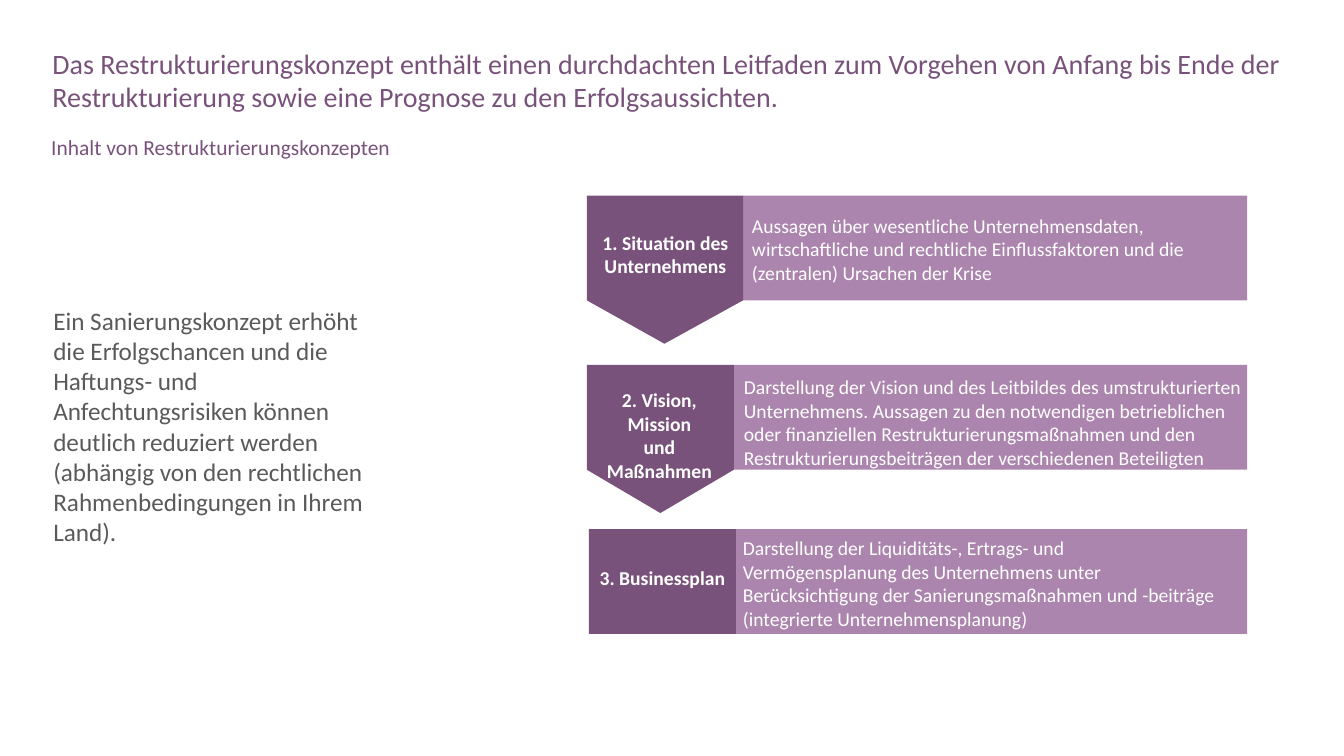
from pptx import Presentation
from pptx.dml.color import RGBColor as Rgb
from pptx.enum.shapes import MSO_SHAPE as Shape
from pptx.enum.text import MSO_ANCHOR as Anchor, MSO_AUTO_SIZE as Fit, PP_ALIGN as Align
from pptx.util import Emu, Pt

PX = 9144
FONT = "Calibri"
HUES = {"dark": "79527B", "light": "AB85AD", "gray": "595A59", "white": "FFFFFF"}
HIGH = 104
STEPS = [
    {"box": (582, 194, 655), "wide": 155, "tip": 43,
     "head": ["1. Situation des Unternehmens"], "tag": (-6, 30, 168, 57),
     "text": "Aussagen über wesentliche Unternehmensdaten, wirtschaftliche und "
             "rechtliche Einflussfaktoren und die (zentralen) Ursachen der Krise",
     "note": (-1, 13, 489, 81)},
    {"box": (582, 362, 655), "wide": 146, "tip": 43,
     "head": ["2. Vision, Mission", "und Maßnahmen"], "tag": (-7, 18, 158, 128),
     "text": "Darstellung der Vision und des Leitbildes des umstrukturierten "
             "Unternehmens. Aussagen zu den notwendigen betrieblichen oder "
             "finanziellen Restrukturierungsmaßnahmen und den "
             "Restrukturierungsbeiträgen der verschiedenen Beteiligten",
     "note": (0, 5, 526, 104)},
    {"box": (584, 525, 653), "wide": 146, "tip": 0,
     "head": ["3. Businessplan"], "tag": (-6, 32, 158, 34),
     "text": "Darstellung der Liquiditäts-, Ertrags- und Vermögensplanung des "
             "Unternehmens unter Berücksichtigung der Sanierungsmaßnahmen und "
             "-beiträge (integrierte Unternehmensplanung)",
     "note": (-3, 2, 493, 104)},
]


def px(*nums):
    """Turn px lengths into EMU."""
    return [Emu(num * PX) for num in nums]


def paint(shape, hue):
    """Give a shape a flat fill without line or shadow."""
    shape.shadow.inherit = False
    shape.fill.solid()
    shape.fill.fore_color.rgb = Rgb.from_string(HUES[hue])
    shape.line.fill.background()


def write(shape, lines, size, hue, bold=False, align=Align.LEFT, anchor=Anchor.TOP):
    """Fill a text shape with one paragraph of broken lines."""
    frame = shape.text_frame
    frame.word_wrap = True
    frame.auto_size = Fit.NONE
    frame.vertical_anchor = anchor
    para = frame.paragraphs[0]
    para.alignment = align
    for num, line in enumerate(lines):
        if num:
            para.add_line_break()
        run = para.add_run()
        run.text = line
        font = run.font
        font.name, font.size, font.bold = FONT, Pt(size), bold
        font.color.rgb = Rgb.from_string(HUES[hue])
    return para


def header(slide, box):
    """Place the title and the subtitle below it."""
    left, top, wide, high = box
    title = slide.shapes.title
    title.left, title.top, title.width, title.height = px(*box)
    write(title, ["Das Restrukturierungskonzept enthält einen durchdachten Leitfaden zum "
                  "Vorgehen von Anfang bis Ende der Restrukturierung sowie eine Prognose "
                  "zu den Erfolgsaussichten."], 20, "dark")
    sub = slide.shapes.add_textbox(*px(left - 1, top + 94, wide + 2, 28))
    para = write(sub, ["Inhalt von Restrukturierungskonzepten"], 15.3, "dark")
    para.line_spacing = 0.7


def aside(slide, box):
    """Place the statement on the left."""
    shape = slide.shapes.add_textbox(*px(*box))
    write(shape, ["Ein Sanierungskonzept erhöht die Erfolgschancen und die Haftungs- und "
                  "Anfechtungsrisiken können deutlich reduziert werden (abhängig von den "
                  "rechtlichen Rahmenbedingungen in Ihrem Land)."],
          18, "gray", anchor=Anchor.MIDDLE)


def label(slide, box, tip):
    """Draw the dark label, with a tip pointing down if it has one."""
    left, top, wide, high = box
    if tip:
        right, base = left + wide, top + high
        pen = slide.shapes.build_freeform(left, top, scale=PX)
        pen.add_line_segments([(right, top), (right, base),
                               (left + wide // 2, base + tip), (left, base)], close=True)
        shape = pen.convert_to_shape()
    else:
        shape = slide.shapes.add_shape(Shape.RECTANGLE, *px(*box))
    paint(shape, "dark")


def step(slide, box, wide, tip, head, tag, text, note):
    """Draw one step: bar, label and their texts."""
    left, top, full = box
    mid = left + wide
    bar = slide.shapes.add_shape(Shape.RECTANGLE, *px(mid, top, full - wide, HIGH))
    paint(bar, "light")
    label(slide, (left, top, wide, HIGH), tip)
    for start, place, lines, bold, align in (
            (left, tag, head, True, Align.CENTER),
            (mid, note, [text], False, Align.LEFT)):
        dx, dy, *size = place
        shape = slide.shapes.add_textbox(*px(start + dx, top + dy, *size))
        write(shape, lines, 14, "white", bold, align)


def main():
    """Build and save the slide."""
    deck = Presentation()
    deck.slide_width, deck.slide_height = px(1333, 750)
    slide = deck.slides.add_slide(deck.slide_layouts[5])
    header(slide, (42, 41, 1254, 64))
    aside(slide, (43, 179, 349, 487))
    for item in STEPS:
        step(slide, **item)
    deck.save("out.pptx")


if __name__ == "__main__":
    main()
